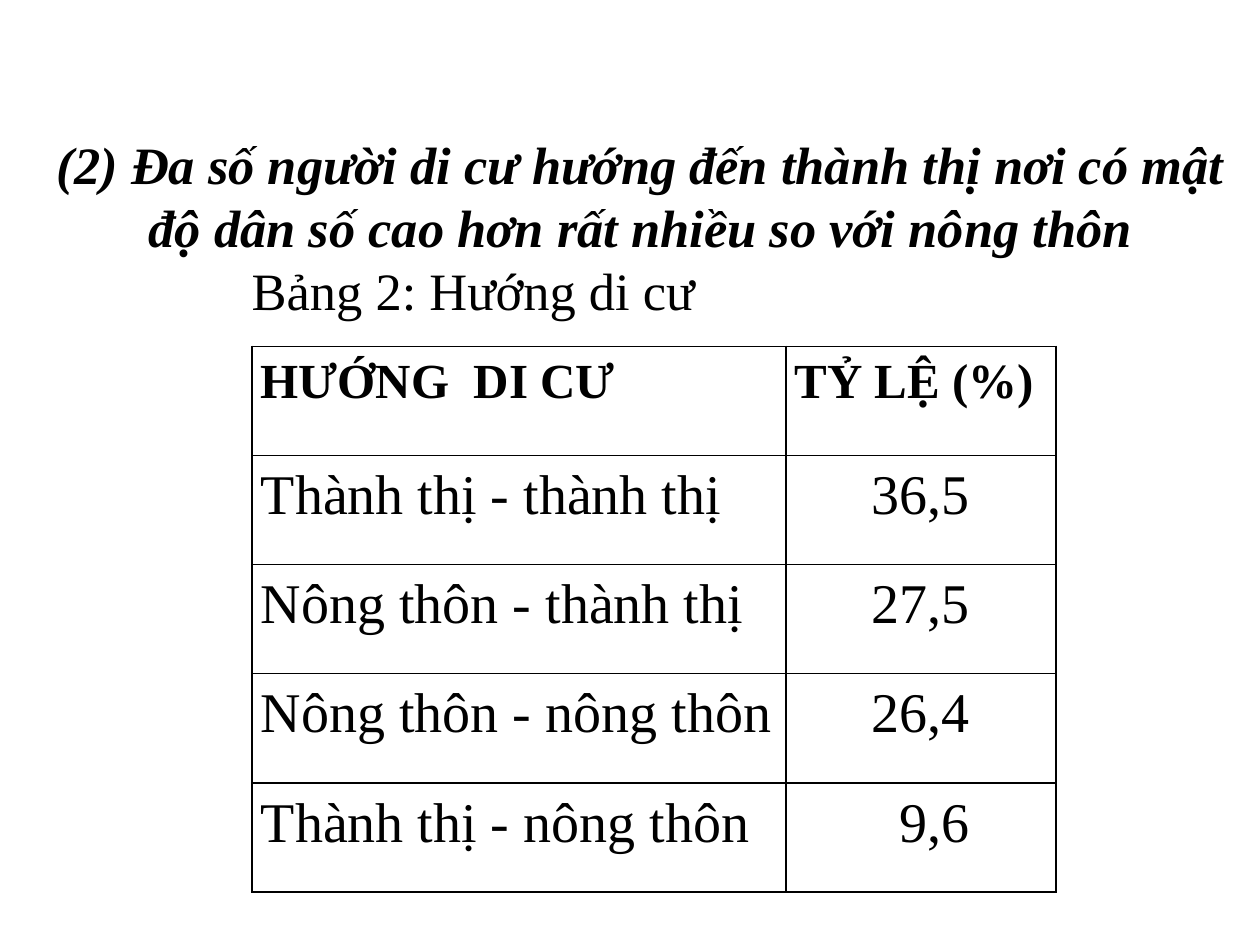
from dataclasses import dataclass

from lxml import etree
from pptx import Presentation
from pptx.dml.color import RGBColor
from pptx.enum import text as t
from pptx.oxml import ns
from pptx.util import Cm, Pt

FONT = "Times New Roman"
INK = "000000"
LEFT, MID = t.PP_ALIGN.LEFT, t.PP_ALIGN.CENTER


@dataclass
class Row:
    label: str
    rate: str
    size: int = 32
    bold: bool = False
    align: t.PP_ALIGN = MID
    indent: float = 0


ROWS = [
    Row("HƯỚNG  DI CƯ", "TỶ LỆ (%)", size=28, bold=True, align=LEFT),
    Row("Thành thị - thành thị", "36,5"),
    Row("Nông thôn - thành thị", "27,5"),
    Row("Nông thôn - nông thôn", "26,4"),
    Row("Thành thị - nông thôn", "9,6", indent=0.56),  # lines up the commas
]
COLS = (10.76, 5.45)
HIGH = 2.2


def color(code: str) -> RGBColor:
    return RGBColor.from_string(code)


def write(para, words: str, *, size: int, bold=False, italic=False,
          align=LEFT, space=1.0, indent=0.0) -> None:
    para.alignment = align
    para.line_spacing = space
    para.space_before = Pt(0)
    if indent:
        props = para._p.get_or_add_pPr()
        props.set("marL", str(Cm(indent)))
        props.set("indent", "0")
    run = para.add_run()
    run.text = words
    font = run.font
    font.name, font.size = FONT, Pt(size)
    font.bold, font.italic = bold, italic
    font.color.rgb = color(INK)


def border(cell, code: str, width: float) -> None:
    props = cell._tc.get_or_add_tcPr()
    for spot, side in enumerate(("lnL", "lnR", "lnT", "lnB")):
        line = etree.Element(ns.qn(f"a:{side}"), w=str(Pt(width)))
        fill = etree.SubElement(line, ns.qn("a:solidFill"))
        etree.SubElement(fill, ns.qn("a:srgbClr"), val=code)
        props.insert(spot, line)


def draw_cell(cell, words: str, **form) -> None:
    cell.margin_left = cell.margin_right = Cm(0.18)
    cell.margin_top = cell.margin_bottom = 0
    cell.fill.background()
    border(cell, INK, 1)
    write(cell.text_frame.paragraphs[0], words, space=1.15, **form)


def draw_table(slide, rows: list[Row]) -> None:
    grid = slide.shapes.add_table(len(rows), len(COLS), Cm(5.08), Cm(6.98),
                                  Cm(sum(COLS)), Cm(HIGH * len(rows))).table
    grid.first_row = grid.horz_banding = False
    for col, width in zip(grid.columns, COLS):
        col.width = Cm(width)
    for num, row in enumerate(rows):
        form = dict(size=row.size, bold=row.bold)
        draw_cell(grid.cell(num, 0), row.label, **form)
        draw_cell(grid.cell(num, 1), row.rate, align=row.align,
                  indent=row.indent, **form)


def draw_title(slide) -> None:
    title = slide.shapes.title
    title.left, title.top = Cm(0.85), Cm(2.54)
    title.width, title.height = Cm(24.13), Cm(4.11)
    frame = title.text_frame
    frame.word_wrap = True
    frame.auto_size = t.MSO_AUTO_SIZE.NONE
    frame.vertical_anchor = t.MSO_ANCHOR.TOP
    write(frame.paragraphs[0],
          "(2) Đa số người di cư hướng đến thành thị nơi có mật "
          "độ dân số cao hơn rất nhiều so với nông thôn",
          size=30, bold=True, italic=True, align=MID)
    # Table caption
    write(frame.add_paragraph(), "Bảng 2: Hướng di cư", size=30, indent=3.97)


def main() -> None:
    deck = Presentation()
    deck.slide_width, deck.slide_height = Cm(25.4), Cm(19.05)
    slide = deck.slides.add_slide(deck.slide_layouts[5])
    draw_table(slide, ROWS)
    draw_title(slide)
    deck.save("out.pptx")


if __name__ == "__main__":
    main()
